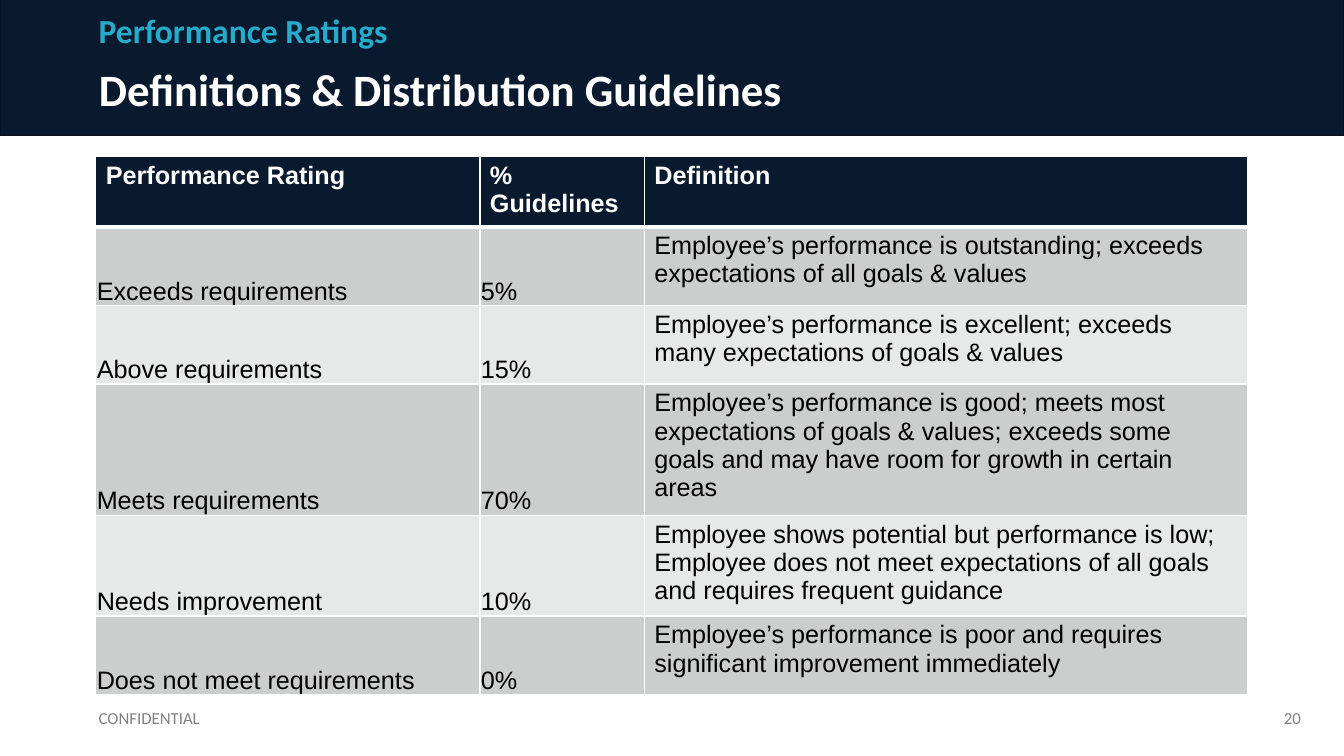
"""Build the performance ratings definitions slide."""
import lxml.etree
import pptx
import pptx.dml.color
import pptx.enum.shapes
import pptx.enum.text
import pptx.oxml.ns
import pptx.util

Inches = pptx.util.Inches
Anchor = pptx.enum.text.MSO_ANCHOR
Align = pptx.enum.text.PP_ALIGN

NAVY = "091A2F"
WHITE = "FFFFFF"
GREY = "808080"
BAND_FILLS = ("CCCDCD", "E7E8E8")
COLUMN_WIDTHS = (3.81, 1.63, 5.98)
HEADER_HEIGHT = 0.45
ROW_HEIGHT = 0.78
HEADINGS = ("Performance Rating", "% Guidelines", "Definition")
RATINGS = (
    ("Exceeds requirements", "5%",
     "Employee’s performance is outstanding; exceeds expectations of all goals & values"),
    ("Above requirements", "15%",
     "Employee’s performance is excellent; exceeds many expectations of goals & values"),
    ("Meets requirements", "70%",
     "Employee’s performance is good; meets most expectations of goals & values; "
     "exceeds some goals and may have room for growth in certain areas"),
    ("Needs improvement", "10%",
     "Employee shows potential but performance is low; Employee does not meet "
     "expectations of all goals and requires frequent guidance"),
    ("Does not meet requirements", "0%",
     "Employee’s performance is poor and requires significant improvement immediately"),
)


def color(value):
    """Return the colour for a hex string."""
    return pptx.dml.color.RGBColor.from_string(value)


def write_text(text_frame, text, size, font_name, font_color, bold=False,
               align=Align.LEFT, line_spacing=1.0):
    """Put one formatted paragraph into a text frame."""
    text_frame.text = text
    paragraph = text_frame.paragraphs[0]
    paragraph.alignment = align
    paragraph.line_spacing = line_spacing
    for run in paragraph.runs:
        run.font.size = pptx.util.Pt(size)
        run.font.name = font_name
        run.font.bold = bold
        run.font.color.rgb = color(font_color)


def add_label(slide, text, box, size, font_color, anchor=Anchor.MIDDLE, **style):
    """Add a wrapped text box."""
    text_frame = slide.shapes.add_textbox(*map(Inches, box)).text_frame
    text_frame.word_wrap = True
    text_frame.vertical_anchor = anchor
    write_text(text_frame, text, size, "Calibri", font_color, **style)


def add_banner(slide):
    """Add the dark band behind the title."""
    banner = slide.shapes.add_shape(
        pptx.enum.shapes.MSO_SHAPE.RECTANGLE,
        Inches(0), Inches(-0.01), Inches(13.33), Inches(1.35))
    banner.shadow.inherit = False
    banner.fill.solid()
    banner.fill.fore_color.rgb = color(NAVY)
    banner.line.color.rgb = color("071323")
    banner.line.width = pptx.util.Pt(1)
    slide.shapes.title._element.addprevious(banner._element)


def format_title(slide, text):
    """Place and format the title placeholder."""
    title = slide.shapes.title
    title.left, title.top = Inches(0.88), Inches(0.53)
    title.width, title.height = Inches(12.12), Inches(0.8)
    title.text_frame.auto_size = pptx.enum.text.MSO_AUTO_SIZE.NONE
    title.text_frame.vertical_anchor = Anchor.MIDDLE
    write_text(title.text_frame, text, 32, "Calibri", WHITE, bold=True, line_spacing=0.8)


def set_borders(cell, widths):
    """Draw white borders, with widths in points by side."""
    properties = cell._tc.get_or_add_tcPr()
    for index, (side, width) in enumerate(widths.items()):
        line = lxml.etree.Element(
            pptx.oxml.ns.qn(f"a:ln{side}"), w=str(pptx.util.Pt(width)))
        fill = lxml.etree.SubElement(line, pptx.oxml.ns.qn("a:solidFill"))
        lxml.etree.SubElement(fill, pptx.oxml.ns.qn("a:srgbClr"), val=WHITE)
        properties.insert(index, line)


def format_cell(cell, text, row, column):
    """Fill a table cell according to its row and column."""
    is_header = row == 0
    write_text(cell.text_frame, text, 18, "Arial",
               WHITE if is_header else "000000", bold=is_header)
    cell.fill.solid()
    cell.fill.fore_color.rgb = color(NAVY if is_header else BAND_FILLS[(row - 1) % 2])
    set_borders(cell, {"L": 1, "R": 1, "T": 3 if row == 1 else 1, "B": 3 if is_header else 1})
    if not is_header and column < 2:
        cell.vertical_anchor = Anchor.BOTTOM
        cell.margin_left = cell.margin_right = cell.margin_top = Inches(0.01)
        cell.margin_bottom = Inches(0)


def add_ratings_table(slide):
    """Add the table of ratings, guidelines and definitions."""
    rows = (HEADINGS, *RATINGS)
    height = HEADER_HEIGHT + ROW_HEIGHT * len(RATINGS)
    table = slide.shapes.add_table(
        len(rows), len(HEADINGS), Inches(0.95), Inches(1.55),
        Inches(sum(COLUMN_WIDTHS)), Inches(height)).table
    for column, width in zip(table.columns, COLUMN_WIDTHS):
        column.width = Inches(width)
    for row_index, texts in enumerate(rows):
        table.rows[row_index].height = Inches(ROW_HEIGHT if row_index else HEADER_HEIGHT)
        for column_index, text in enumerate(texts):
            format_cell(table.cell(row_index, column_index), text, row_index, column_index)


def main():
    """Build and save the presentation."""
    presentation = pptx.Presentation()
    presentation.slide_width = Inches(13.33)
    presentation.slide_height = Inches(7.5)
    slide = presentation.slides.add_slide(presentation.slide_layouts[5])
    add_banner(slide)
    format_title(slide, "Definitions & Distribution Guidelines")
    add_label(slide, "Performance Ratings", (0.88, 0.07, 12.12, 0.48), 24, "27ABCB",
              anchor=Anchor.BOTTOM, bold=True, line_spacing=0.9)
    add_label(slide, "20", (10, 6.92, 3, 0.4), 12, GREY, align=Align.RIGHT)
    add_label(slide, "CONFIDENTIAL", (0.88, 6.92, 4.5, 0.4), 12, GREY)
    add_ratings_table(slide)
    presentation.save("out.pptx")


if __name__ == "__main__":
    main()
